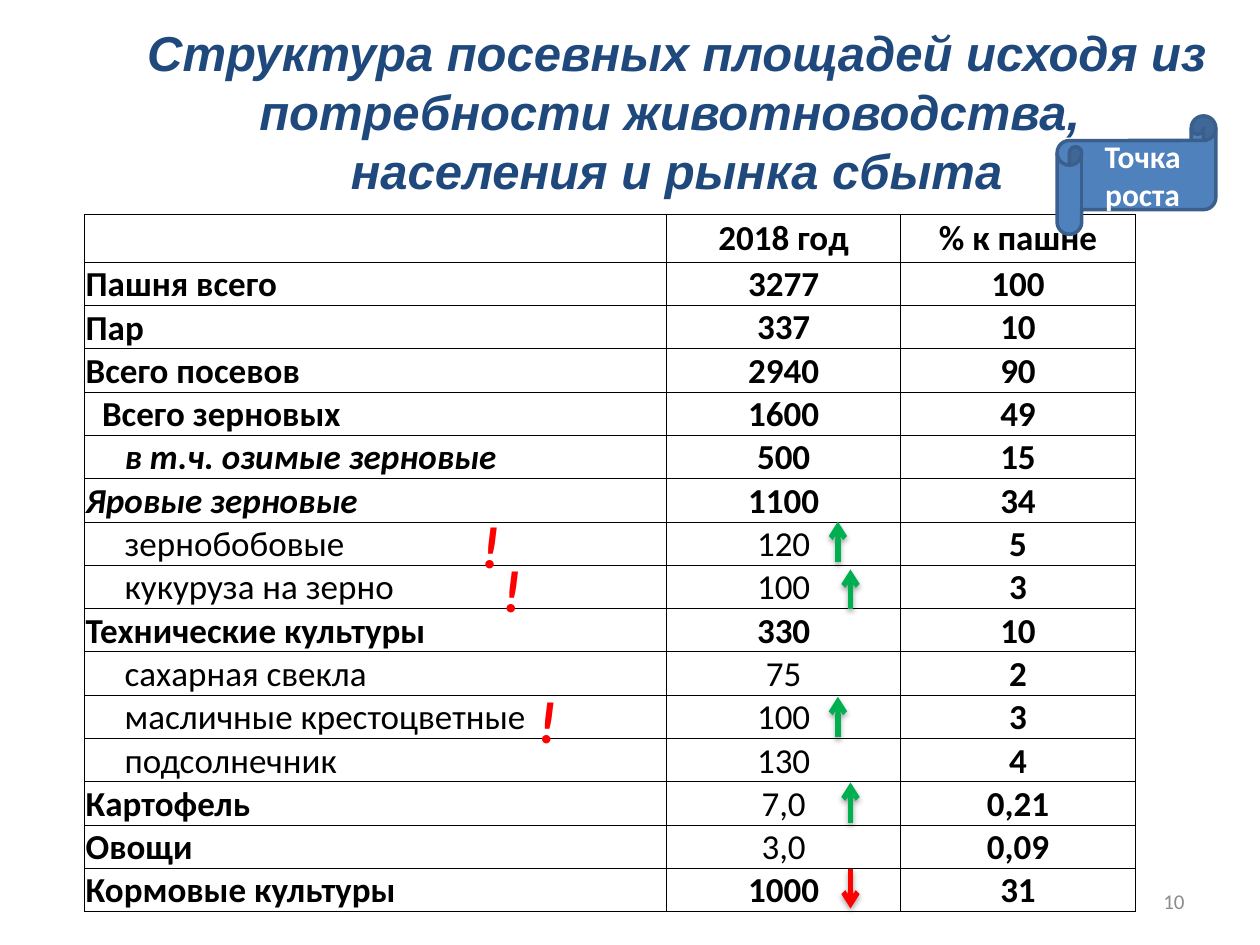
from typing import NamedTuple

import pptx
import pptx.dml.color
import pptx.enum.shapes
import pptx.enum.text
import pptx.oxml
import pptx.oxml.ns
import pptx.util
from pptx.util import Inches

ALIGN = pptx.enum.text.PP_ALIGN
ANCHOR = pptx.enum.text.MSO_ANCHOR
SHAPES = pptx.enum.shapes.MSO_SHAPE
BLACK, RED, GREEN = "000000", "FF0000", "00B050"


class Crop(NamedTuple):
    name: str
    area: str
    share: str
    indent: float = 0
    name_bold: bool = True
    area_bold: bool = True
    italic: bool = False


class Mark(NamedTuple):
    left: float
    top: float


class Trend(NamedTuple):
    x: float
    start: float
    end: float
    color: str = GREEN


def rgb(color: str) -> pptx.dml.color.RGBColor:
    return pptx.dml.color.RGBColor.from_string(color)


def write(frame, lines: list[str], size: float, color: str, font: str = "Calibri",
          bold: bool = False, italic: bool = False, align=ALIGN.LEFT) -> None:
    for number, line in enumerate(lines):
        paragraph = frame.paragraphs[0] if number == 0 else frame.add_paragraph()
        paragraph.text = line
        paragraph.alignment = align
        paragraph.font.name = font
        paragraph.font.size = pptx.util.Pt(size)
        paragraph.font.bold = bold
        paragraph.font.italic = italic
        paragraph.font.color.rgb = rgb(color)


def add_text(slide, left: float, top: float, width: float, height: float,
             lines: list[str], size: float, color: str, anchor=ANCHOR.TOP, **style) -> None:
    frame = slide.shapes.add_textbox(
        Inches(left), Inches(top), Inches(width), Inches(height)).text_frame
    frame.word_wrap = True
    frame.vertical_anchor = anchor
    write(frame, lines, size, color, **style)


def add_borders(cell) -> None:
    properties = cell._tc.get_or_add_tcPr()
    for position, side in enumerate(("lnL", "lnR", "lnT", "lnB")):
        properties.insert(position, pptx.oxml.parse_xml(
            f'<a:{side} {pptx.oxml.ns.nsdecls("a")} w="{pptx.util.Pt(0.5)}">'
            f'<a:solidFill><a:srgbClr val="{BLACK}"/></a:solidFill></a:{side}>'))


def fill_cell(cell, text: str, bold: bool = True, italic: bool = False,
              indent: float = 0, align=ALIGN.CENTER, anchor=ANCHOR.BOTTOM) -> None:
    cell.fill.background()
    cell.margin_left = Inches(0.01 + indent)
    cell.margin_right = cell.margin_top = Inches(0.01)
    cell.margin_bottom = 0
    cell.vertical_anchor = anchor
    write(cell.text_frame, [text], 20, BLACK, bold=bold, italic=italic, align=align)
    add_borders(cell)


def add_crop_table(slide, headings: list[str], crops: list[Crop]) -> None:
    height, header_height = 5.53, 0.38
    table = slide.shapes.add_table(
        len(crops) + 1, len(headings),
        Inches(0.67), Inches(1.7), Inches(8.35), Inches(height)).table
    table.first_row = table.horz_banding = False
    for column, width in zip(table.columns, (4.62, 1.86, 1.86)):
        column.width = Inches(width)
    for row in table.rows:
        row.height = Inches((height - header_height) / len(crops))
    table.rows[0].height = Inches(header_height)

    for column, heading in enumerate(headings):
        fill_cell(table.cell(0, column), heading, anchor=ANCHOR.MIDDLE)
    for row, crop in enumerate(crops, start=1):
        fill_cell(table.cell(row, 0), crop.name, crop.name_bold, crop.italic,
                  crop.indent, ALIGN.LEFT, ANCHOR.MIDDLE)
        fill_cell(table.cell(row, 1), crop.area, crop.area_bold)
        fill_cell(table.cell(row, 2), crop.share)


def add_trend(slide, trend: Trend) -> None:
    arrow = slide.shapes.add_connector(
        pptx.enum.shapes.MSO_CONNECTOR.STRAIGHT,
        Inches(trend.x), Inches(trend.start), Inches(trend.x), Inches(trend.end))
    arrow.line.color.rgb = rgb(trend.color)
    arrow.line.width = pptx.util.Pt(3)
    namespace = pptx.oxml.ns.nsdecls("a")
    arrow.line._get_or_add_ln().append(
        pptx.oxml.parse_xml(f'<a:tailEnd {namespace} type="arrow"/>'))
    arrow._element.spPr.append(pptx.oxml.parse_xml(
        f'<a:effectLst {namespace}><a:outerShdw blurRad="{pptx.util.Pt(3.1)}" '
        f'dist="{pptx.util.Pt(1.8)}" dir="5400000" rotWithShape="0">'
        f'<a:srgbClr val="{BLACK}"><a:alpha val="35000"/></a:srgbClr>'
        '</a:outerShdw></a:effectLst>'))


def add_growth_scroll(slide) -> None:
    scroll = slide.shapes.add_shape(
        SHAPES.HORIZONTAL_SCROLL, Inches(8.39), Inches(0.92), Inches(1.26), Inches(0.94))
    scroll.adjustments[0] = 0.208
    scroll.shadow.inherit = False
    scroll.fill.solid()
    scroll.fill.fore_color.rgb = rgb("4F81BD")
    scroll.line.color.rgb = rgb("3A5F8C")
    scroll.line.width = pptx.util.Pt(2)
    scroll.text_frame.word_wrap = True
    scroll.text_frame.vertical_anchor = ANCHOR.MIDDLE
    write(scroll.text_frame, ["Точка роста"], 18, "FFFFFF", bold=True, align=ALIGN.CENTER)


HEADINGS = ["", "2018 год", "% к пашне"]
STEP = 0.31
CROPS = [
    Crop("Пашня всего", "3277", "100"),
    Crop("Пар", "337", "10"),
    Crop("Всего посевов", "2940", "90"),
    Crop("Всего зерновых", "1600", "49", indent=0.13),
    Crop("в т.ч. озимые зерновые", "500", "15", STEP, italic=True),
    Crop("Яровые зерновые", "1100", "34", italic=True),
    Crop("зернобобовые", "120", "5", STEP, False, False),
    Crop("кукуруза на зерно", "100", "3", STEP, False, False),
    Crop("Технические культуры", "330", "10"),
    Crop("сахарная свекла", "75", "2", STEP, False, False),
    Crop("масличные крестоцветные", "100", "3", STEP, False, False),
    Crop("подсолнечник", "130", "4", STEP, False, False),
    Crop("Картофель", "7,0", "0,21", area_bold=False),
    Crop("Овощи", "3,0", "0,09", area_bold=False),
    Crop("Кормовые культуры", "1000", "31"),
]
MARKS = [Mark(3.74, 4.02), Mark(4.19, 5.41), Mark(3.91, 4.37)]
TRENDS = [
    Trend(6.65, 4.46, 4.14),
    Trend(6.75, 4.83, 4.52),
    Trend(6.65, 5.85, 5.53),
    Trend(6.75, 6.53, 6.21),
    Trend(6.75, 6.9, 7.21, RED),
]


def main() -> None:
    deck = pptx.Presentation()
    deck.slide_width, deck.slide_height = Inches(10), Inches(7.5)
    slide = deck.slides.add_slide(deck.slide_layouts[6])

    # Page number and title
    add_text(slide, 7.17, 6.95, 2.33, 0.4, ["10"], 12, "8C8C8C",
             anchor=ANCHOR.MIDDLE, align=ALIGN.RIGHT)
    add_text(slide, 0.86, 0.13, 9.02, 1.51,
             ["Структура посевных площадей исходя из потребности животноводства, ",
              "населения и рынка сбыта"],
             28, "1F497D", font="Arial", bold=True, italic=True, align=ALIGN.CENTER)

    # Sown areas
    add_crop_table(slide, HEADINGS, CROPS)

    # Crops to watch and the direction of change
    for mark in MARKS:
        add_text(slide, mark.left, mark.top, 0.73, 0.64, ["!"], 32, RED,
                 font="Lato", bold=True, italic=True)
    for trend in TRENDS:
        add_trend(slide, trend)

    # Growth point label
    add_growth_scroll(slide)

    deck.save("out.pptx")


if __name__ == "__main__":
    main()
